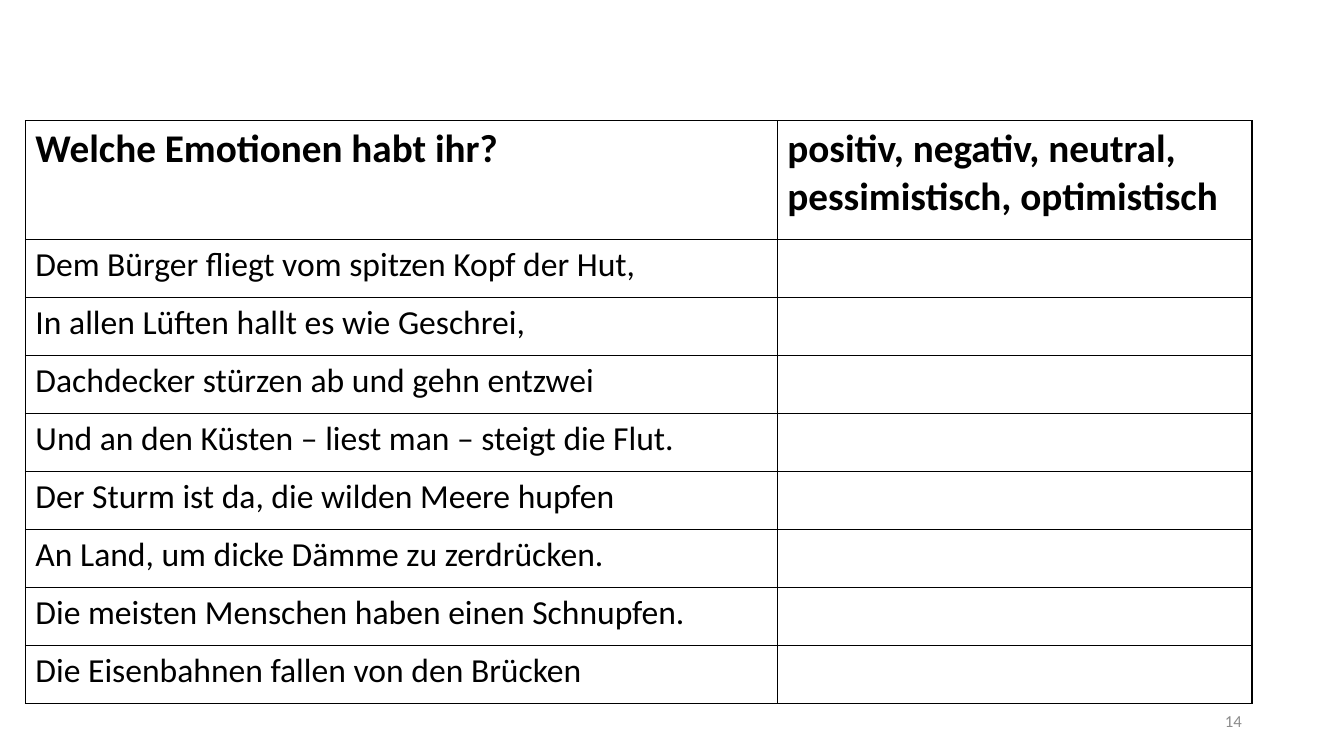
from lxml.etree import SubElement
from pptx import Presentation
from pptx.dml.color import RGBColor
from pptx.enum.text import MSO_ANCHOR as Anchor, PP_ALIGN as Align
from pptx.oxml.ns import qn
from pptx.util import Cm, Pt

BLACK = RGBColor(0x00, 0x00, 0x00)
WHITE = RGBColor(0xFF, 0xFF, 0xFF)
GREY = RGBColor(0x8C, 0x8C, 0x8C)

QUESTION = "Welche Emotionen habt ihr?"
ANSWERS = "positiv, negativ, neutral,\npessimistisch, optimistisch"
VERSES = [
    "Dem Bürger fliegt vom spitzen Kopf der Hut,",
    "In allen Lüften hallt es wie Geschrei,",
    "Dachdecker stürzen ab und gehn entzwei",
    "Und an den Küsten – liest man – steigt die Flut.",
    "Der Sturm ist da, die wilden Meere hupfen",
    "An Land, um dicke Dämme zu zerdrücken.",
    "Die meisten Menschen haben einen Schnupfen.",
    "Die Eisenbahnen fallen von den Brücken",
]


def write(frame, text, size=24, bold=False, color=BLACK, font="Calibri", align=Align.LEFT):
    """Fill a text frame, one paragraph per line of text."""
    frame.text = text
    for paragraph in frame.paragraphs:
        paragraph.alignment = align
        style = paragraph.font
        style.name, style.size, style.bold = font, Pt(size), bold
        style.color.rgb = color
        for run in paragraph.runs:
            run.font.name, run.font.size, run.font.bold = font, Pt(size), bold
            run.font.color.rgb = color


class Worksheet:
    """Holds the slide and the style of its table lines."""

    def __init__(self, slide, line_color=BLACK, line_width=1):
        self.slide = slide
        self.line_color = line_color
        self.line_width = line_width

    def border(self, cell):
        properties = cell._tc.get_or_add_tcPr()
        for side in ("a:lnL", "a:lnR", "a:lnT", "a:lnB"):
            line = SubElement(properties, qn(side), w=str(Pt(self.line_width)))
            fill = SubElement(line, qn("a:solidFill"))
            SubElement(fill, qn("a:srgbClr"), val=str(self.line_color))

    def table(self, left, top, widths, heights, rows):
        grid = self.slide.shapes.add_table(
            len(heights), len(widths), Cm(left), Cm(top), Cm(sum(widths)), Cm(sum(heights))
        ).table
        grid.horz_banding = False
        for column, width in zip(grid.columns, widths):
            column.width = Cm(width)
        for row, height, texts in zip(grid.rows, heights, rows):
            row.height = Cm(height)
            heading = texts is rows[0]
            for cell, text in zip(row.cells, texts):
                self.border(cell)
                cell.fill.solid()
                cell.fill.fore_color.rgb = WHITE
                write(cell.text_frame, text, size=28 if heading else 24, bold=heading)

    def label(self, left, top, width, height, text, **style):
        frame = self.slide.shapes.add_textbox(Cm(left), Cm(top), Cm(width), Cm(height)).text_frame
        frame.word_wrap = True
        frame.vertical_anchor = Anchor.MIDDLE
        write(frame, text, **style)


def main():
    deck = Presentation()
    deck.slide_width, deck.slide_height = Cm(33.87), Cm(19.05)
    sheet = Worksheet(deck.slides.add_slide(deck.slide_layouts[6]))

    # Verses with an empty column for the answers
    rows = [(QUESTION, ANSWERS)] + [(verse, "") for verse in VERSES]
    heights = [3] + [1.46] * len(VERSES)
    sheet.table(0.64, 3.04, [18.95, 11.96], heights, rows)

    # Page number
    sheet.label(23.93, 17.65, 7.62, 1.01, "14", size=12, color=GREY, align=Align.RIGHT)

    deck.save("out.pptx")


if __name__ == "__main__":
    main()
